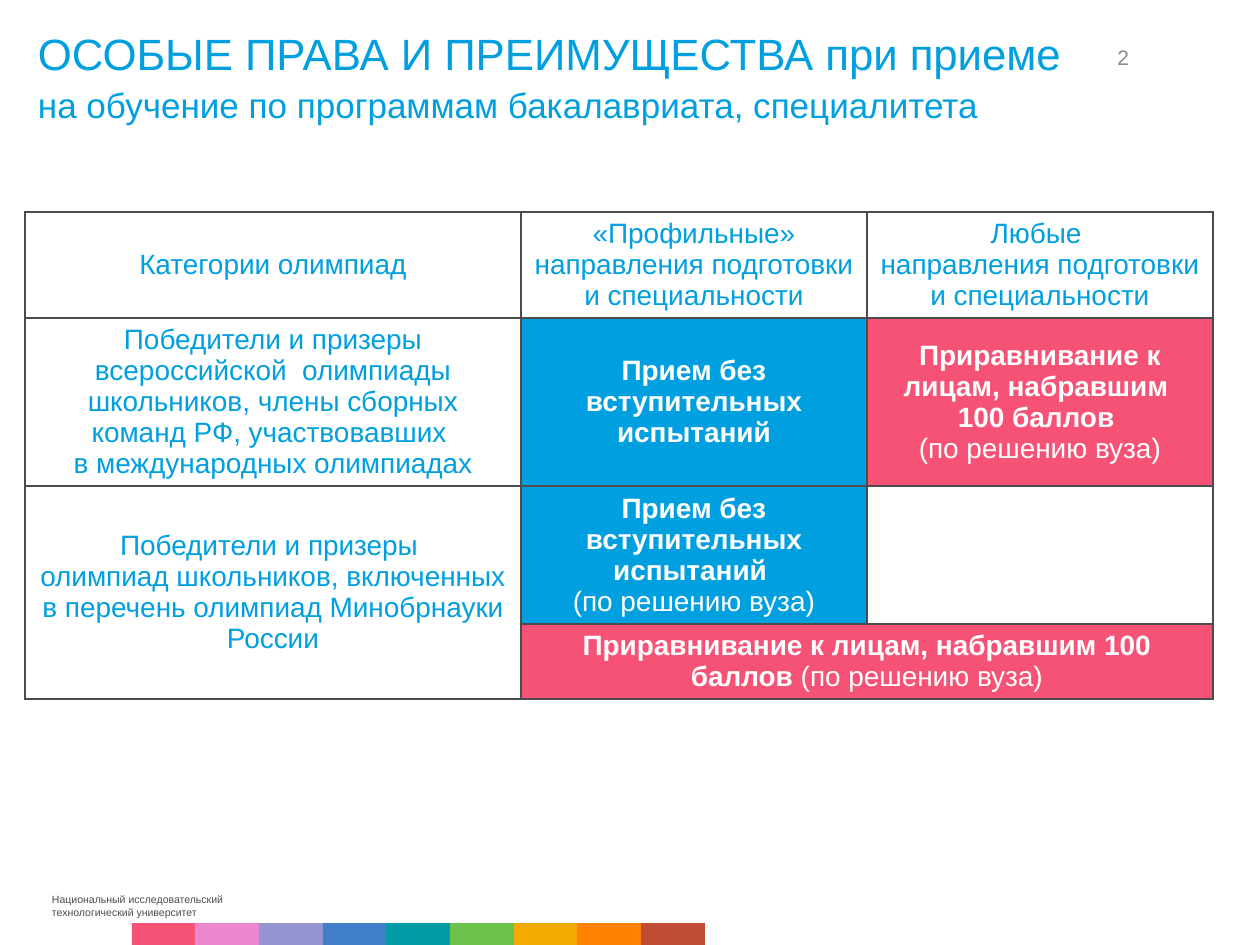
"""Build the slide on admission rights of olympiad winners."""
import pptx
import pptx.util
import pptx.dml.color
import pptx.enum.shapes
import pptx.enum.text
import pptx.oxml
import pptx.oxml.ns

BLUE, PINK, WHITE, DARK, GREY = "009FDF", "F65275", "FFFFFF", "4C4C4C", "898989"
ALIGN = pptx.enum.text.PP_ALIGN
ANCHOR = pptx.enum.text.MSO_ANCHOR

BAND = [PINK, "EC86D0", "9595D2", "407EC9", "009CA6",
        "6CC24A", "F2A900", "FF8200", "C04C36"]
BAR = (132, 923, 573, 22)

PLAIN = {"size": 16, "color": BLUE}
BOLD = {"size": 16, "color": WHITE, "bold": True}
LIGHT = {"size": 16, "color": WHITE, "bold": False}
NOTE = ("(по решению вуза)", LIGHT)

PLACE = (25, 212)
COLS = [496, 346, 346]
ROWS = [106, 168, 138, 74]
MERGES = [((2, 0), (3, 0)), ((3, 1), (3, 2))]
CELLS = {
    (0, 0): (None, [[("Категории олимпиад", PLAIN)]]),
    (0, 1): (None, [[("«Профильные» направления подготовки ", PLAIN)],
                    [("и специальности", PLAIN)]]),
    (0, 2): (None, [[("Любые ", PLAIN)],
                    [("направления подготовки и специальности", PLAIN)]]),
    (1, 0): (None, [[("Победители и призеры всероссийской  олимпиады школьников, "
                      "члены сборных команд РФ, участвовавших ", PLAIN)],
                    [("в международных олимпиадах", PLAIN)]]),
    (1, 1): (BLUE, [[("Прием без вступительных испытаний", BOLD)]]),
    (1, 2): (PINK, [[("Приравнивание к лицам, набравшим ", BOLD)],
                    [("100 баллов ", BOLD)], [NOTE]]),
    (2, 0): (None, [[("Победители и призеры ", PLAIN)],
                    [("олимпиад школьников, включенных в перечень олимпиад "
                      "Минобрнауки России", PLAIN)]]),
    (2, 1): (BLUE, [[("Прием без вступительных испытаний ", BOLD)], [NOTE]]),
    (3, 1): (PINK, [[("Приравнивание к лицам, набравшим 100 баллов ", BOLD), NOTE]]),
}

SMALL = {"size": 6, "color": DARK}
TEXTS = [
    {"at": (25, 21, 1186, 59), "pad": (13, 6, 13, 6), "wrap": True,
     "align": ALIGN.LEFT, "gap": 2,
     "paras": [[("ОСОБЫЕ ПРАВА И ПРЕИМУЩЕСТВА при приеме", {"size": 25, "color": BLUE})],
               [("на обучение по программам бакалавриата, специалитета",
                 {"size": 20, "color": BLUE})]]},
    {"at": (1023, 45, 106, 45), "pad": (0, 0, 0, 0), "wrap": True,
     "align": ALIGN.RIGHT, "gap": 0,
     "paras": [[("2", {"size": 12, "color": GREY})]]},
    {"at": (44, 888, 195, 35), "pad": (8, 5, 10, 5), "wrap": False,
     "align": ALIGN.LEFT, "gap": 0,
     "paras": [[("Национальный исследовательский", SMALL)],
               [("технологический университет", SMALL)]]},
]


def px(n):
    return pptx.util.Emu(round(n * 914400 / 126))


def rgb(code):
    return pptx.dml.color.RGBColor.from_string(code)


def apply(item, values):
    for name, value in values.items():
        setattr(item, name, value)


def write(frame, paras, align, gap=0):
    for i, runs in enumerate(paras):
        para = frame.add_paragraph() if i else frame.paragraphs[0]
        para.alignment = align
        if i and gap:
            para.space_before = pptx.util.Pt(gap)
        for text, style in runs:
            run = para.add_run()
            run.text = text
            apply(run.font, {"name": "Arial", "size": pptx.util.Pt(style["size"]),
                             "bold": style.get("bold", False)})
            run.font.color.rgb = rgb(style["color"])


def border(cell):
    props = cell._tc.get_or_add_tcPr()
    for side in "LRTB":
        props.append(pptx.oxml.parse_xml(
            f'<a:ln{side} {pptx.oxml.ns.nsdecls("a")} w="12700"><a:solidFill>'
            f'<a:srgbClr val="{DARK}"/></a:solidFill></a:ln{side}>'))


def draw_band(slide):
    left, top, width, height = BAR
    edges = [left + width * i // len(BAND) for i in range(len(BAND) + 1)]
    for color, start, end in zip(BAND, edges, edges[1:]):
        block = slide.shapes.add_shape(
            pptx.enum.shapes.MSO_SHAPE.RECTANGLE,
            px(start), px(top), px(end - start), px(height))
        block.shadow.inherit = False
        block.fill.solid()
        block.fill.fore_color.rgb = rgb(color)
        block.line.fill.background()


def draw_table(slide):
    size = (sum(COLS), sum(ROWS))
    table = slide.shapes.add_table(
        len(ROWS), len(COLS), *map(px, PLACE + size)).table
    apply(table, {"first_row": False, "horz_banding": False})
    for col, width in zip(table.columns, COLS):
        col.width = px(width)
    for row, height in zip(table.rows, ROWS):
        row.height = px(height)
    for first, last in MERGES:
        table.cell(*first).merge(table.cell(*last))
    for r in range(len(ROWS)):
        for c in range(len(COLS)):
            cell = table.cell(r, c)
            fill, paras = CELLS.get((r, c), (None, []))
            border(cell)
            cell.vertical_anchor = ANCHOR.MIDDLE
            if fill:
                cell.fill.solid()
                cell.fill.fore_color.rgb = rgb(fill)
            else:
                cell.fill.background()
            write(cell.text_frame, paras, ALIGN.CENTER)


def draw_text(slide, item):
    frame = slide.shapes.add_textbox(*map(px, item["at"])).text_frame
    left, top, right, bottom = map(px, item["pad"])
    apply(frame, {"margin_left": left, "margin_top": top, "margin_right": right,
                  "margin_bottom": bottom, "word_wrap": item["wrap"],
                  "vertical_anchor": ANCHOR.TOP})
    write(frame, item["paras"], item["align"], item["gap"])


def main():
    deck = pptx.Presentation()
    apply(deck, {"slide_width": px(1260), "slide_height": px(945)})
    slide = deck.slides.add_slide(deck.slide_layouts[6])
    draw_band(slide)
    draw_table(slide)
    for item in TEXTS:
        draw_text(slide, item)
    deck.save("out.pptx")


if __name__ == "__main__":
    main()
